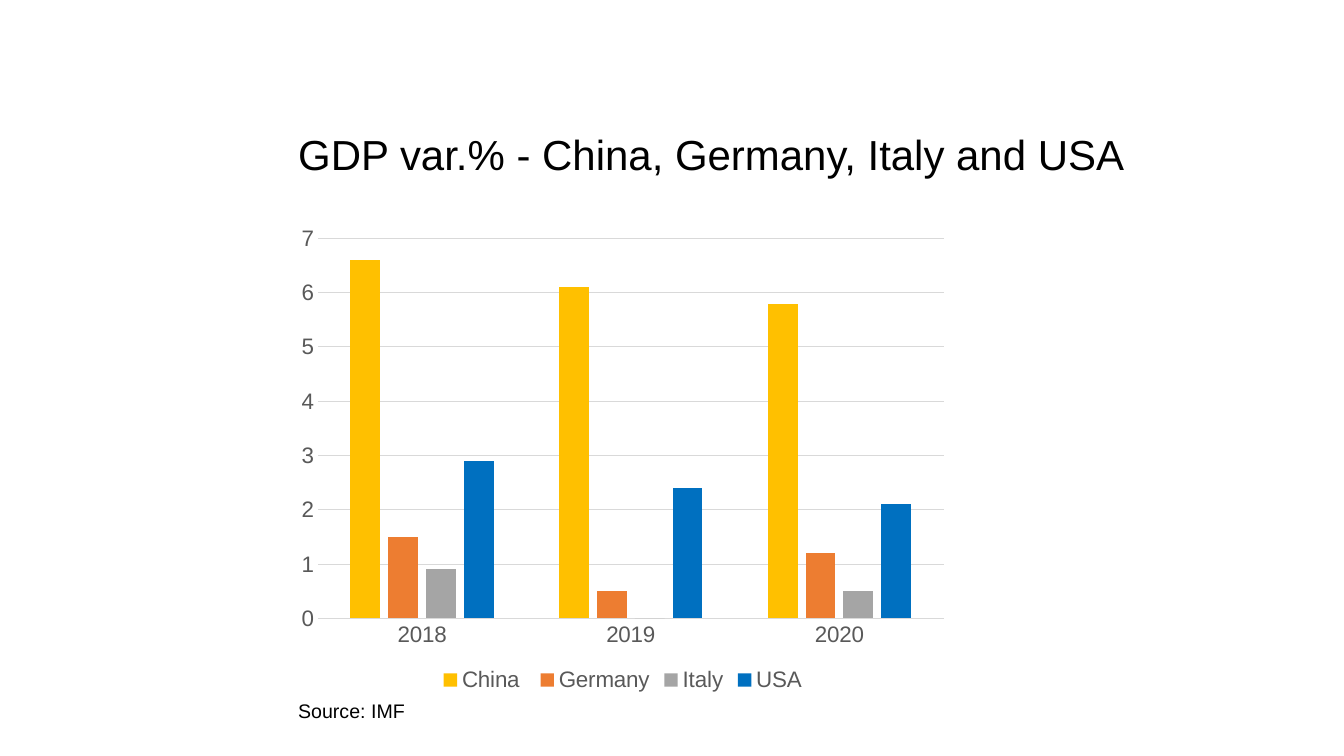
from dataclasses import dataclass

from pptx import Presentation
from pptx.chart.data import CategoryChartData
from pptx.dml.color import RGBColor
from pptx.enum.chart import XL_CHART_TYPE as ChartType
from pptx.enum.chart import XL_LEGEND_POSITION as LegendPos
from pptx.enum.chart import XL_TICK_MARK as Tick
from pptx.enum.text import MSO_ANCHOR as Anchor
from pptx.enum.text import PP_ALIGN as Align
from pptx.util import Inches, Pt

WIDTH, HEIGHT = 13.34, 7.5


@dataclass(frozen=True)
class Theme:
    font: str = "Arial"
    text: str = "000000"
    label: str = "595959"
    grid: str = "D9D9D9"
    title_size: int = 30
    label_size: int = 16
    source_size: int = 14
    line_width: float = 0.75


@dataclass(frozen=True)
class Box:
    """A frame in percent of the slide's width and height."""
    left: float
    top: float
    width: float
    height: float

    def emu(self) -> tuple[int, int, int, int]:
        x, y = WIDTH / 100, HEIGHT / 100
        return (Inches(self.left * x), Inches(self.top * y),
                Inches(self.width * x), Inches(self.height * y))


@dataclass(frozen=True)
class Country:
    name: str
    growth: tuple[float, ...]
    color: str


THEME = Theme()
LEFT = 21.44
TITLE_BOX = Box(LEFT, 16.27, 66.42, 8.13)
CHART_BOX = Box(LEFT, 28.67, 49.78, 63.47)
SOURCE_BOX = Box(LEFT, 91.73, 16.19, 4.53)

YEARS = ("2018", "2019", "2020")
COUNTRIES = (
    Country("China ", (6.6, 6.1, 5.8), "FFC000"),
    Country("Germany", (1.5, 0.5, 1.2), "ED7D31"),
    Country("Italy", (0.9, 0, 0.5), "A5A5A5"),
    Country("USA", (2.9, 2.4, 2.1), "0070C0"),
)


def style_font(font, *, size: int, color: str) -> None:
    font.name = THEME.font
    font.size = Pt(size)
    font.bold = False
    font.color.rgb = RGBColor.from_string(color)


def style_line(line) -> None:
    line.color.rgb = RGBColor.from_string(THEME.grid)
    line.width = Pt(THEME.line_width)


def write(sp, text: str, *, size: int, color: str = THEME.text) -> None:
    tf = sp.text_frame
    tf.word_wrap = True
    tf.vertical_anchor = Anchor.TOP
    p = tf.paragraphs[0]
    p.alignment = Align.LEFT
    p.line_spacing = 1.0
    r = p.add_run()
    r.text = text
    style_font(r.font, size=size, color=color)


def add_growth_chart(s, box: Box) -> None:
    data = CategoryChartData()
    data.categories = YEARS
    for country in COUNTRIES:
        data.add_series(country.name, country.growth)
    chart = s.shapes.add_chart(ChartType.COLUMN_CLUSTERED, *box.emu(), data).chart
    chart.has_title = False
    style_font(chart.font, size=THEME.label_size, color=THEME.label)

    # Columns
    plot = chart.plots[0]
    plot.gap_width, plot.overlap = 219, -27
    plot.vary_by_categories = False
    for series, country in zip(plot.series, COUNTRIES):
        series.format.fill.solid()
        series.format.fill.fore_color.rgb = RGBColor.from_string(country.color)

    # Axes
    years, growth = chart.category_axis, chart.value_axis
    for axis in (years, growth):
        axis.major_tick_mark = axis.minor_tick_mark = Tick.NONE
        style_font(axis.tick_labels.font, size=THEME.label_size, color=THEME.label)
    style_line(years.format.line)
    growth.format.line.fill.background()
    growth.minimum_scale, growth.maximum_scale, growth.major_unit = 0, 7, 1
    growth.tick_labels.number_format = "General"
    growth.tick_labels.number_format_is_linked = False
    style_line(growth.major_gridlines.format.line)

    # Legend
    chart.has_legend = True
    chart.legend.position = LegendPos.BOTTOM
    chart.legend.include_in_layout = False
    style_font(chart.legend.font, size=THEME.label_size, color=THEME.label)


def main() -> None:
    prs = Presentation()
    prs.slide_width, prs.slide_height = Inches(WIDTH), Inches(HEIGHT)
    s = prs.slides.add_slide(prs.slide_layouts[5])

    # Title
    title = s.shapes.title
    title.left, title.top, title.width, title.height = TITLE_BOX.emu()
    write(title, "GDP var.% - China, Germany, Italy and USA", size=THEME.title_size)

    # Chart and its source
    add_growth_chart(s, CHART_BOX)
    source = s.shapes.add_textbox(*SOURCE_BOX.emu())
    write(source, "Source: IMF", size=THEME.source_size)

    prs.save("out.pptx")


if __name__ == "__main__":
    main()
